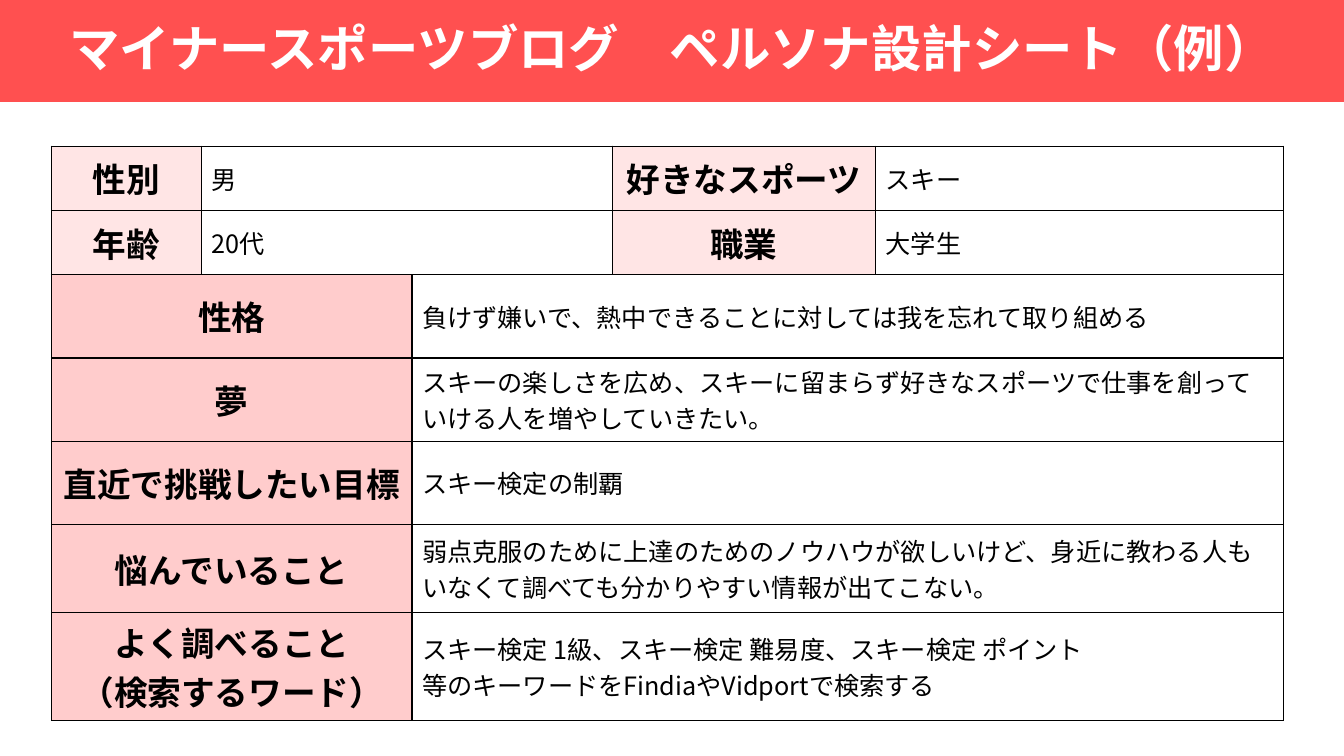
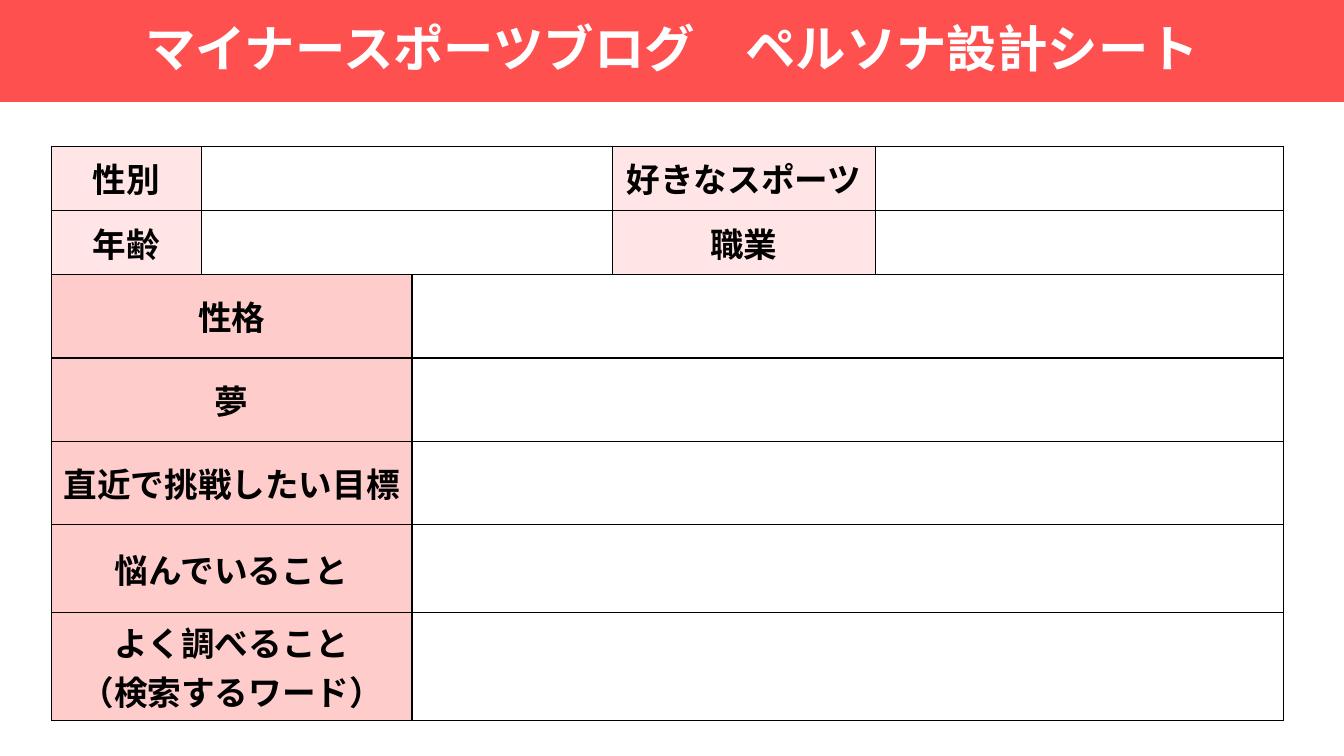
from lxml import etree
from pptx import Presentation
from pptx.dml.color import RGBColor
from pptx.enum import text
from pptx.oxml import ns
from pptx.util import Pt

COLORS = {"band": "FF5050", "basic": "FFE5E5", "detail": "FFCCCC",
          "title": "FFFFFF", "ink": "000000"}
CJK_FONT = "Noto Sans CJK JP"
CENTER, LEFT = text.PP_ALIGN.CENTER, text.PP_ALIGN.LEFT
FORMATS = {
    "title": {"name": "Arial", "size": Pt(36), "bold": True},
    "label": {"name": CJK_FONT, "size": Pt(24), "bold": True},
    "value": {"name": CJK_FONT, "size": Pt(18), "bold": False},
}

# Sheet grid in points
SLIDE_WIDTH, SLIDE_HEIGHT, BAND_HEIGHT = 960, 540, 72.8
SHEET_LEFT, SHEET_TOP, SHEET_WIDTH = 36.7, 104.4, 880
BASIC_ROWS = [45.9, 45.9]
DETAIL_ROWS = [59.5, 59.5, 59.5, 62.8, 77]
SPLIT = 400.7  # width of the left basic table
PERSON_LABEL, ACTIVITY_LABEL, DETAIL_LABEL = 107.2, 188, 257.6

# Labels of the three tables
PERSON = ["性別", "年齢"]
ACTIVITY = ["好きなスポーツ", "職業"]
DETAILS = ["性格", "夢", "直近で挑戦したい目標", "悩んでいること",
           "よく調べること\v（検索するワード）"]

# Answers by label; the blank sheet has none
EXAMPLE = {
    "性別": "男",
    "年齢": "20代",
    "好きなスポーツ": "スキー",
    "職業": "大学生",
    "性格": "負けず嫌いで、熱中できることに対しては我を忘れて取り組める",
    "夢": "スキーの楽しさを広め、スキーに留まらず好きなスポーツで仕事を創って"
         "いける人を増やしていきたい。",
    "直近で挑戦したい目標": "スキー検定の制覇",
    "悩んでいること": "弱点克服のために上達のためのノウハウが欲しいけど、身近に教わる人も"
                "いなくて調べても分かりやすい情報が出てこない。",
    DETAILS[-1]: "スキー検定 1級、スキー検定 難易度、スキー検定 ポイント\n"
                 "等のキーワードをFindiaやVidportで検索する",
}
SHEETS = [("マイナースポーツブログ　ペルソナ設計シート（例）", EXAMPLE),
          ("マイナースポーツブログ　ペルソナ設計シート", {})]


def rgb(key):
    return RGBColor.from_string(COLORS[key])


def write(text_frame, content, style, color, alignment):
    text_frame.text = content
    for paragraph in text_frame.paragraphs:
        paragraph.alignment = alignment
        for run in paragraph.runs:
            run.font.color.rgb = rgb(color)
            for name, value in FORMATS[style].items():
                setattr(run.font, name, value)
            east_asian = etree.SubElement(run.font._element, ns.qn("a:ea"))
            east_asian.set("typeface", CJK_FONT)


def add_title(slide, content):
    title = slide.shapes.title
    title.left = title.top = Pt(0)
    title.width, title.height = Pt(SLIDE_WIDTH), Pt(BAND_HEIGHT)
    title.fill.solid()
    title.fill.fore_color.rgb = rgb("band")
    title.text_frame.vertical_anchor = text.MSO_ANCHOR.MIDDLE
    title.text_frame.word_wrap = True
    write(title.text_frame, content, "title", "title", CENTER)
    title.text_frame.paragraphs[0].line_spacing = 0.9


def add_borders(cell):
    properties = cell._tc.get_or_add_tcPr()
    for side in ("lnL", "lnR", "lnT", "lnB"):
        line = etree.SubElement(properties, ns.qn(f"a:{side}"), w=str(Pt(1)))
        fill = etree.SubElement(line, ns.qn("a:solidFill"))
        etree.SubElement(fill, ns.qn("a:srgbClr"), val=COLORS["ink"])


def add_form(slide, left, top, columns, rows, labels, answers, label_fill):
    """Add a two-column table of labels and their answers."""
    frame = slide.shapes.add_table(len(rows), 2, Pt(left), Pt(top),
                                   Pt(sum(columns)), Pt(sum(rows)))
    table = frame.table
    table.first_row = table.horz_banding = False
    for column, width in zip(table.columns, columns):
        column.width = Pt(width)
    for row, height, label in zip(table.rows, rows, labels):
        row.height = Pt(height)
        for cell in row.cells:
            add_borders(cell)
            cell.vertical_anchor = text.MSO_ANCHOR.MIDDLE
        label_cell, answer_cell = row.cells
        label_cell.fill.solid()
        label_cell.fill.fore_color.rgb = rgb(label_fill)
        answer_cell.fill.background()
        write(label_cell.text_frame, label, "label", "ink", CENTER)
        if label in answers:
            write(answer_cell.text_frame, answers[label], "value", "ink", LEFT)


def add_sheet(presentation, title, answers):
    slide = presentation.slides.add_slide(presentation.slide_layouts[5])
    add_title(slide, title)
    # Basic profile, side by side
    add_form(slide, SHEET_LEFT, SHEET_TOP, [PERSON_LABEL, SPLIT - PERSON_LABEL],
             BASIC_ROWS, PERSON, answers, "basic")
    add_form(slide, SHEET_LEFT + SPLIT, SHEET_TOP,
             [ACTIVITY_LABEL, SHEET_WIDTH - SPLIT - ACTIVITY_LABEL],
             BASIC_ROWS, ACTIVITY, answers, "basic")
    # Detailed profile below
    add_form(slide, SHEET_LEFT, SHEET_TOP + sum(BASIC_ROWS),
             [DETAIL_LABEL, SHEET_WIDTH - DETAIL_LABEL],
             DETAIL_ROWS, DETAILS, answers, "detail")


def main():
    presentation = Presentation()
    presentation.slide_width = Pt(SLIDE_WIDTH)
    presentation.slide_height = Pt(SLIDE_HEIGHT)
    for title, answers in SHEETS:
        add_sheet(presentation, title, answers)
    presentation.save("out.pptx")


if __name__ == "__main__":
    main()
